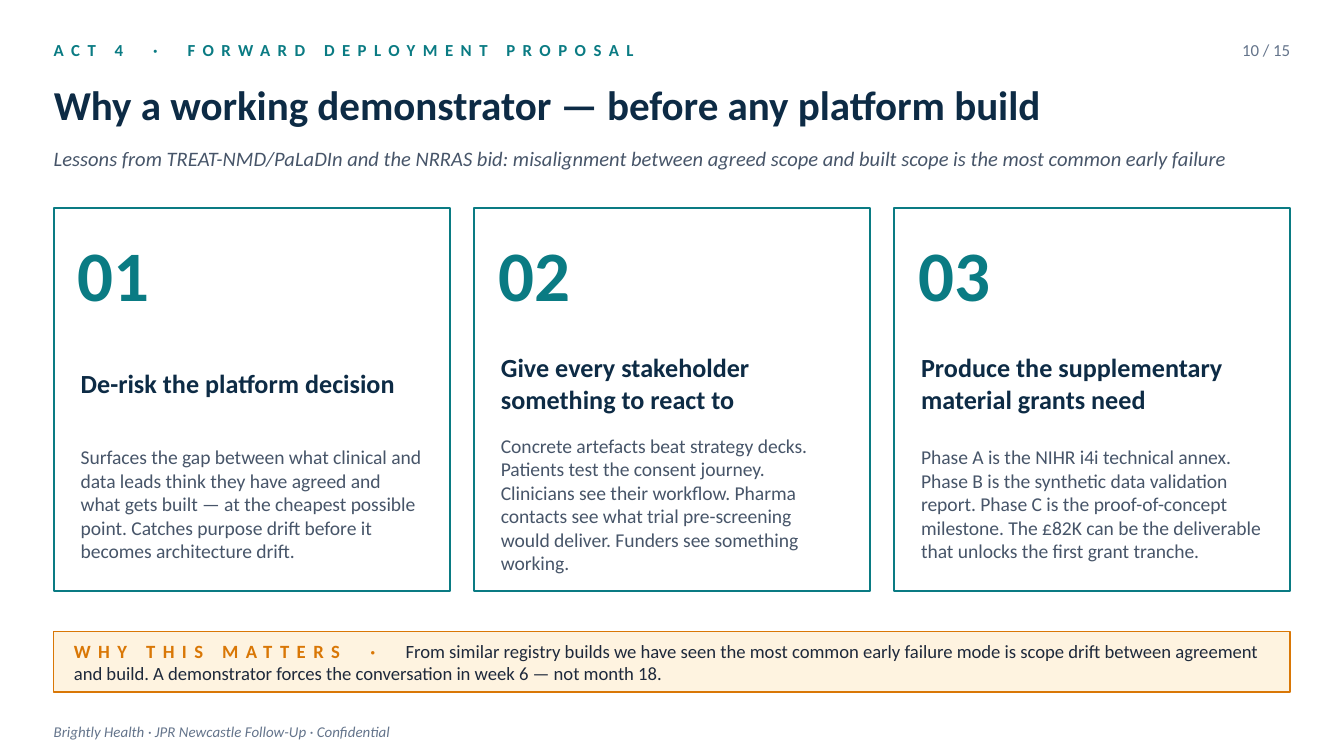
"""Build the slide on why a working demonstrator comes first."""
from pptx import Presentation
from pptx import util as u
from pptx.dml import color
from pptx.enum import shapes, text

FONT = "Calibri"
TEAL, NAVY, SLATE, GREY = "0A7B83", "0D2B45", "475569", "64748B"
AMBER, CREAM, INK, WHITE = "D97706", "FEF3E0", "1E293B", "FFFFFF"
LEFT, WIDTH = 0.4, 9.2
CARD_GAP = 0.18

CARDS = [
    ("De-risk the platform decision",
     "Surfaces the gap between what clinical and data leads think they have agreed "
     "and what gets built — at the cheapest possible point. Catches purpose drift "
     "before it becomes architecture drift."),
    ("Give every stakeholder something to react to",
     "Concrete artefacts beat strategy decks. Patients test the consent journey. "
     "Clinicians see their workflow. Pharma contacts see what trial pre-screening "
     "would deliver. Funders see something working."),
    ("Produce the supplementary material grants need",
     "Phase A is the NIHR i4i technical annex. Phase B is the synthetic data "
     "validation report. Phase C is the proof-of-concept milestone. The £82K can be "
     "the deliverable that unlocks the first grant tranche."),
]
CARD_WIDTH = (WIDTH - CARD_GAP * (len(CARDS) - 1)) / len(CARDS)


def rgb(value):
    """Turn a hex string into a colour."""
    return color.RGBColor.from_string(value)


def add_span(para, words, size, ink, bold=False, italic=False, tracking=0):
    """Add one formatted run, with letter spacing in points."""
    span = para.add_run()
    span.text = words
    font = span.font
    font.name, font.size = FONT, u.Pt(size)
    font.bold, font.italic = bold, italic
    font.color.rgb = rgb(ink)
    if tracking:
        span._r.get_or_add_rPr().set("spc", str(tracking * 100))


def prepare_frame(box, align=text.PP_ALIGN.LEFT):
    """Remove the margins, centre vertically and return the first paragraph."""
    frame = box.text_frame
    frame.word_wrap = True
    frame.auto_size = text.MSO_AUTO_SIZE.NONE
    frame.vertical_anchor = text.MSO_ANCHOR.MIDDLE
    frame.margin_left = frame.margin_right = 0
    frame.margin_top = frame.margin_bottom = 0
    para = frame.paragraphs[0]
    para.alignment = align
    return para


def add_box(page, left, top, width, height, align=text.PP_ALIGN.LEFT):
    """Add a text box and return its paragraph."""
    box = page.shapes.add_textbox(*map(u.Inches, (left, top, width, height)))
    return prepare_frame(box, align)


def add_panel(page, left, top, width, height, fill, line, weight):
    """Add a filled and outlined rectangle."""
    panel = page.shapes.add_shape(
        shapes.MSO_SHAPE.RECTANGLE, *map(u.Inches, (left, top, width, height)))
    panel.shadow.inherit = False
    panel.fill.solid()
    panel.fill.fore_color.rgb = rgb(fill)
    panel.line.color.rgb = rgb(line)
    panel.line.width = u.Pt(weight)


def add_title(page, words):
    """Place and format the title placeholder."""
    title = page.shapes.title
    title.left, title.top = u.Inches(LEFT), u.Inches(0.5)
    title.width, title.height = u.Inches(WIDTH), u.Inches(0.55)
    add_span(prepare_frame(title), words, 22, NAVY, bold=True)


def add_label(para, parts, size, ink):
    """Add a widely tracked label, with wider spaces around its dot."""
    for part in parts:
        add_span(para, part, size, ink, bold=True, tracking=10 if part == " " else 4)


def add_card(page, index, heading, body):
    """Add one numbered reason card."""
    left = LEFT + index * (CARD_WIDTH + CARD_GAP)
    inner = CARD_WIDTH - 0.4
    add_panel(page, left, 1.55, CARD_WIDTH, 2.85, WHITE, TEAL, 1)
    number = add_box(page, left + 0.18, 1.71, 1.2, 0.65)
    add_span(number, f"{index + 1:02}", 38, TEAL, bold=True)
    add_span(add_box(page, left + 0.2, 2.5, inner, 0.7), heading, 14, NAVY, bold=True)
    add_span(add_box(page, left + 0.2, 3.25, inner, 1), body, 10.5, SLATE)


def add_callout(page):
    """Add the closing callout."""
    add_panel(page, LEFT, 4.7, WIDTH, 0.45, CREAM, AMBER, 0.75)
    para = add_box(page, 0.55, 4.72, 8.9, 0.41)
    add_label(para, ["WHY THIS MATTERS", " ", "·", " "], 10, AMBER)
    add_span(para, "From similar registry builds we have seen the most common early "
             "failure mode is scope drift between agreement and build. A demonstrator "
             "forces the conversation in week 6 — not month 18.", 10, INK)


def main():
    """Build and save the deck."""
    deck = Presentation()
    deck.slide_width, deck.slide_height = u.Inches(10), u.Inches(10 * 9 / 16)
    page = deck.slides.add_slide(deck.slide_layouts.get_by_name("Title Only"))
    add_label(add_box(page, LEFT, 0.22, 6, 0.3),
              ["ACT 4", " ", "·", " ", "FORWARD DEPLOYMENT PROPOSAL"], 9, TEAL)
    add_span(add_box(page, 9.1, 0.22, 0.5, 0.3, text.PP_ALIGN.RIGHT), "10 / 15", 9, GREY)
    add_title(page, "Why a working demonstrator — before any platform build")
    add_span(add_box(page, LEFT, 1.02, WIDTH, 0.32),
             "Lessons from TREAT-NMD/PaLaDIn and the NRRAS bid: misalignment between "
             "agreed scope and built scope is the most common early failure",
             11, SLATE, italic=True)
    for index, (heading, body) in enumerate(CARDS):
        add_card(page, index, heading, body)
    add_callout(page)
    add_span(add_box(page, LEFT, 5.33, WIDTH, 0.22),
             "Brightly Health · JPR Newcastle Follow-Up · Confidential",
             8, GREY, italic=True)
    deck.save("out.pptx")


if __name__ == "__main__":
    main()
